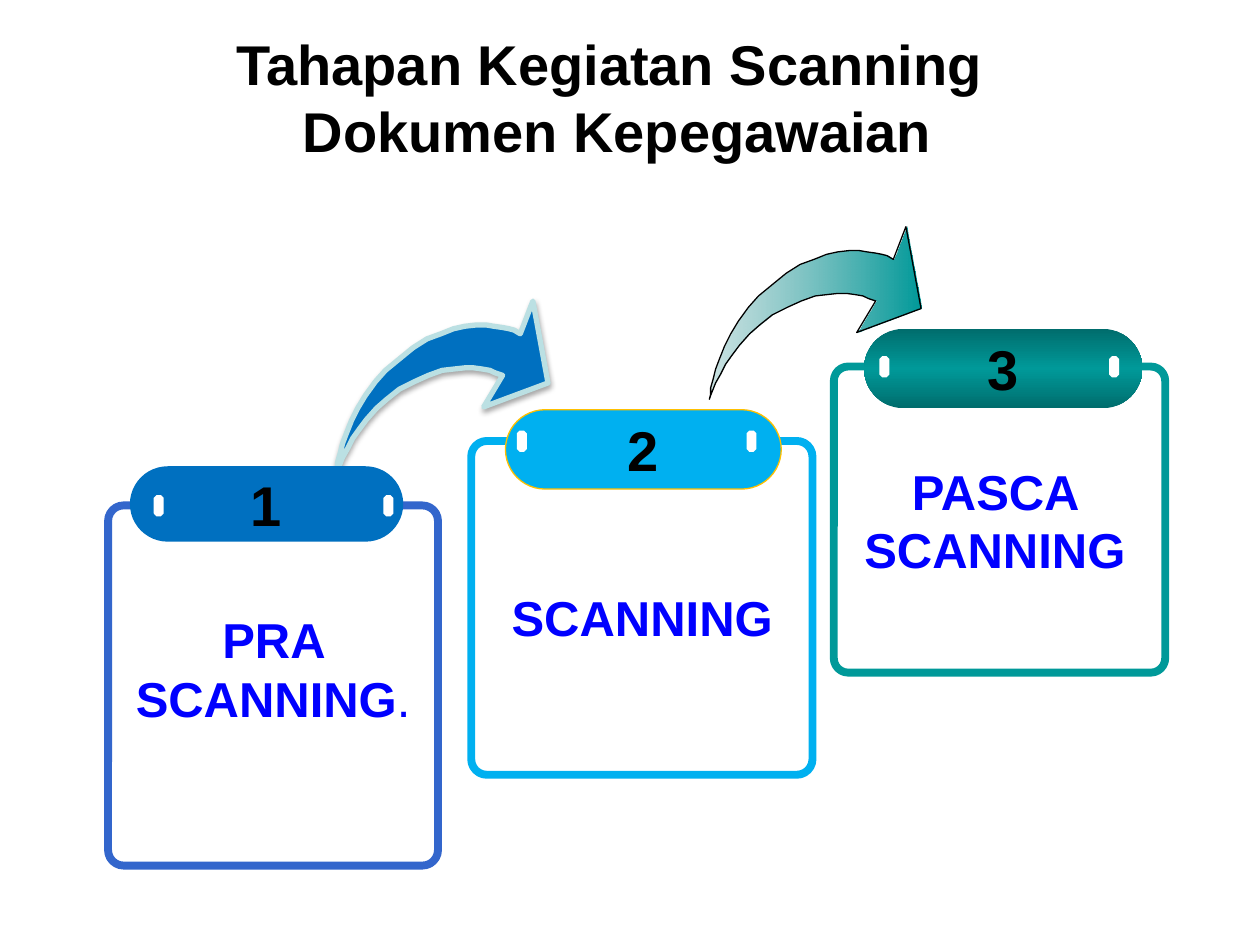
from dataclasses import dataclass
from lxml import etree
from pptx import Presentation
from pptx.dml.color import RGBColor
from pptx.enum.shapes import MSO_SHAPE
from pptx.enum.text import MSO_ANCHOR, MSO_AUTO_SIZE, PP_ALIGN
from pptx.oxml.ns import qn
from pptx.util import Cm, Pt

ROUND, OCTAGON = MSO_SHAPE.ROUNDED_RECTANGLE, MSO_SHAPE.OCTAGON
CENTER, MIDDLE = PP_ALIGN.CENTER, MSO_ANCHOR.MIDDLE
GROW = MSO_AUTO_SIZE.SHAPE_TO_FIT_TEXT


@dataclass(frozen=True)
class Theme:
    """Colours, font and type sizes of the slide."""
    font: str = "Arial"
    head: int = 32
    body: int = 28
    black: str = "000000"
    white: str = "FFFFFF"
    label: str = "0000FF"
    blue: str = "0070C0"
    royal: str = "3366CC"
    sky: str = "00B0F0"
    gold: str = "FFC000"
    teal: str = "009999"
    deep: str = "006D6D"
    mist: str = "5AA6A6"
    pale: str = "BBE0E3"


THEME = Theme()
FADE = ([(0, THEME.mist, 32), (100, THEME.teal, 100)], 0)
SHEEN = ([(0, THEME.deep, 100), (50, THEME.teal, 100), (100, THEME.deep, 100)], 270)

CARDS = [
    ((16.81, 7.39, 6.68, 6.17), (0.61, -0.76, 5.61, 1.6), (0.03, 1.78, 6.43, 2.64),
     "3", ["PASCA SCANNING"], THEME.teal, SHEEN, None),
    ((9.5, 8.89, 6.88, 6.73), (0.69, -0.63, 5.56, 1.6), (0.23, 2.82, 6.43, 1.45),
     "2", ["SCANNING"], THEME.sky, THEME.sky, THEME.gold),
    ((2.18, 10.19, 6.65, 7.26), (0.44, -0.79, 5.51, 1.52), (0, 1.98, 6.65, 2.64),
     "1", ["PRA SCANNING", "."], THEME.royal, THEME.blue, None),
]

CURVE = [
    (0, 137), (1, 134), (3, 129), (5, 124), (9, 117), (13, 109), (18, 102),
    (24, 94), (32, 85), (40, 78), (50, 70), (62, 64), (73, 59), (84, 55),
    (93, 54), (102, 53), (109, 53), (116, 54), (122, 55), (126, 57),
    (129, 58), (132, 59), (117, 84), (168, 65), (156, 0), (146, 26),
    (141, 23), (137, 22), (132, 21), (125, 20), (119, 19), (111, 19),
    (102, 20), (93, 22), (83, 26), (72, 30), (61, 37), (50, 46), (39, 55),
    (31, 64), (23, 75), (17, 85), (12, 95), (8, 105), (5, 113), (3, 121),
    (1, 128), (1, 133),
]


def add(node, tag, **attrs):
    """Append an XML child with the given attributes."""
    child = etree.SubElement(node, qn(tag))
    for name, value in attrs.items():
        child.set(name, str(value))
    return child


def tint(node, color, alpha):
    """Append a colour with its opacity in percent."""
    add(add(node, "a:srgbClr", val=color), "a:alpha", val=alpha * 1000)


def paint(shape, fill=None, line=None, width=0.75):
    """Set a solid, graded or empty fill and the outline."""
    shape.shadow.inherit = False
    if fill is None:
        shape.fill.background()
    elif isinstance(fill, str):
        shape.fill.solid()
        shape.fill.fore_color.rgb = RGBColor.from_string(fill)
    else:
        stops, angle = fill
        shape.fill.gradient()
        shape.fill.gradient_angle = angle
        ramp = shape._element.spPr.find(qn("a:gradFill")).find(qn("a:gsLst"))
        for stop in list(ramp):
            ramp.remove(stop)
        for place, color, alpha in stops:
            tint(add(ramp, "a:gs", pos=place * 1000), color, alpha)
    if line:
        shape.line.color.rgb = RGBColor.from_string(line)
        shape.line.width = Pt(width)
    else:
        shape.line.fill.background()


def style(frame, size, color):
    """Centre the text and set its bold font."""
    for para in frame.paragraphs:
        para.alignment = CENTER
        for run in para.runs:
            run.font.name = THEME.font
            run.font.size = Pt(size)
            run.font.bold = True
            run.font.color.rgb = RGBColor.from_string(color)


def block(slide, kind, box, round_by):
    """Add a preset shape with its corner setting."""
    shape = slide.shapes.add_shape(kind, *map(Cm, box))
    shape.adjustments[0] = round_by
    return shape


def title(slide, box, text):
    """Place and format the title."""
    shape = slide.shapes.title
    shape.left, shape.top, shape.width, shape.height = map(Cm, box)
    frame = shape.text_frame
    frame.text = text
    frame.vertical_anchor = MIDDLE
    style(frame, THEME.head, THEME.black)


def arrow(slide, left, top, fill, line, width):
    """Draw a curved arrow from its top left corner."""
    pen = slide.shapes.build_freeform(*CURVE[0], scale=Cm(0.0254))
    pen.add_line_segments(CURVE[1:], close=True)
    shape = pen.convert_to_shape(Cm(left), Cm(top))
    paint(shape, fill, line, width)
    return shape


def shade(shape):
    """Cast a soft shadow straight down."""
    effects = shape._element.spPr.find(qn("a:effectLst"))
    cast = add(effects, "a:outerShdw", blurRad=Pt(3.1), dist=Pt(1.8),
               dir=5400000, rotWithShape=0)
    tint(cast, THEME.black, 35)


def card(slide, box, tab, note, number, words, edge, fill, rim):
    """Build a framed card with a numbered tab, two holes and a label."""
    left, top = box[:2]

    def shift(part):
        return (left + part[0], top + part[1], *part[2:])

    paint(block(slide, ROUND, box, 0.047), None, edge, 4.5)
    head = block(slide, ROUND, shift(tab), 0.5)
    paint(head, fill, rim)
    frame = head.text_frame
    frame.text = number
    frame.word_wrap = False
    frame.vertical_anchor = MIDDLE
    style(frame, THEME.head, THEME.black)
    for x in (0.92, 5.55):
        paint(block(slide, OCTAGON, shift((x, -0.21, 0.2, 0.43)), 0.29), THEME.white)

    frame = slide.shapes.add_textbox(*map(Cm, shift(note))).text_frame
    frame.word_wrap = True
    frame.auto_size = GROW
    para = frame.paragraphs[0]
    for word in words:
        para.add_run().text = word
    style(frame, THEME.body, THEME.label)
    for run in para.runs[1:]:
        run.font.bold = False


def main():
    """Build and save the slide."""
    deck = Presentation()
    deck.slide_width, deck.slide_height = Cm(25.4), Cm(19.05)
    slide = deck.slides.add_slide(deck.slide_layouts[5])
    title(slide, (1.27, 0.33, 22.35, 3.23),
          "Tahapan Kegiatan Scanning \vDokumen Kepegawaian")
    arrow(slide, 14.3, 4.57, FADE, THEME.black, 0.75)
    shade(arrow(slide, 6.78, 6.07, THEME.blue, THEME.pale, 3))
    for item in CARDS:
        card(slide, *item)
    deck.save("out.pptx")


if __name__ == "__main__":
    main()
